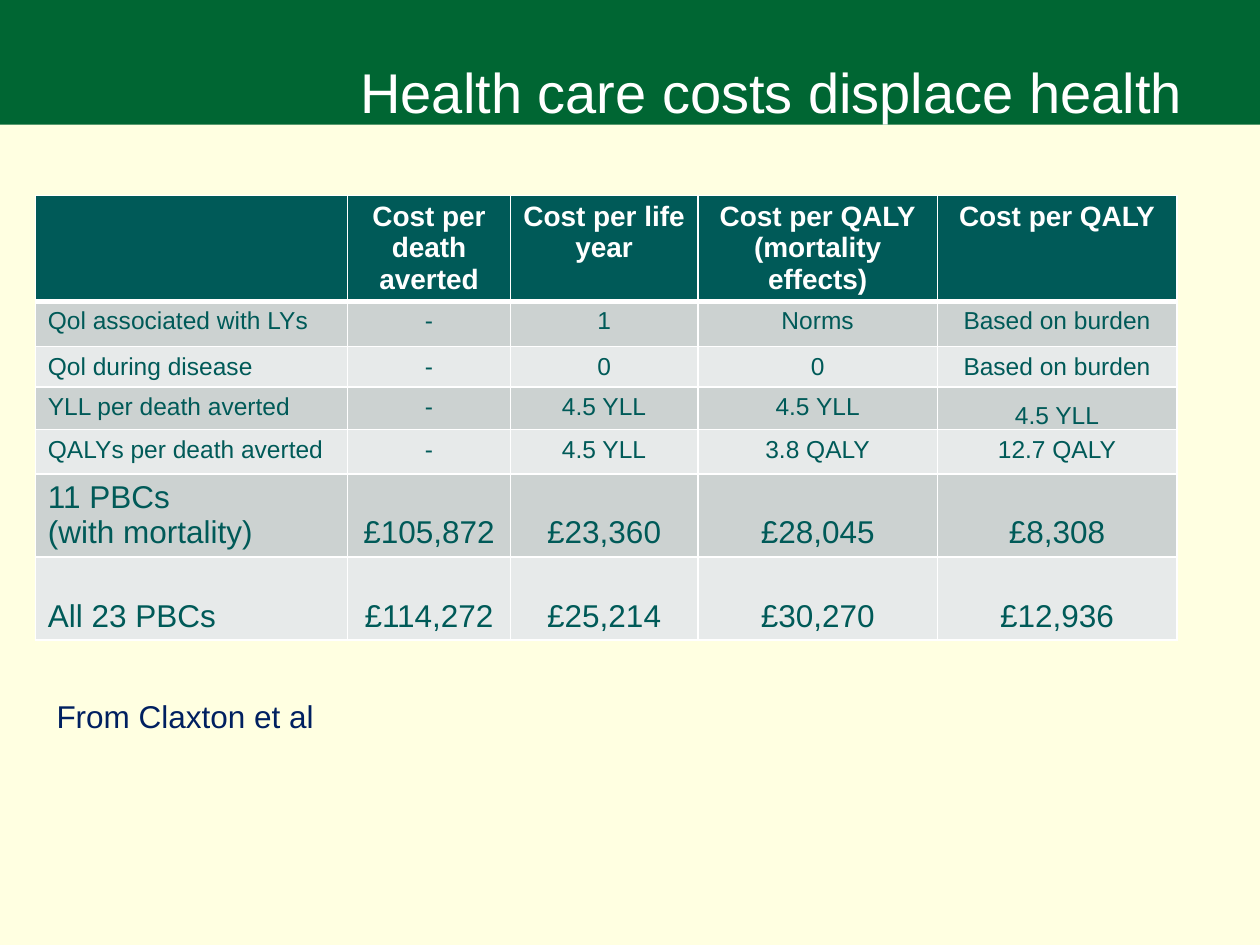
from pptx import Presentation
from pptx.dml.color import RGBColor as RGB
from pptx.enum.shapes import MSO_SHAPE as Shape
from pptx.enum.text import MSO_ANCHOR as Anchor, MSO_AUTO_SIZE as Fit, PP_ALIGN as Align
from pptx.oxml import parse_xml
from pptx.oxml.ns import nsdecls
from pptx.util import Inches, Pt

HEX = {"page": "FFFFE1", "band": "006633", "head": "005A58", "odd": "CCD2D1",
       "even": "E7EAEA", "white": "FFFFFF", "note": "002060"}
COLS = [2.48, 1.29, 1.49, 1.9, 1.9]
ROWS = [0.83, 0.36, 0.32, 0.34, 0.35, 0.66, 0.66]
DATA = [
    ["", "Cost per death averted", "Cost per life year",
     "Cost per QALY\n(mortality effects)", "Cost per QALY"],
    ["Qol associated with LYs", "-", "1", "Norms", "Based on burden"],
    ["Qol during disease", "-", "0", "0", "Based on burden"],
    ["YLL per death averted", "-", "4.5 YLL", "4.5 YLL", "4.5 YLL"],
    ["QALYs per death averted", "-", "4.5 YLL", "3.8 QALY", "12.7 QALY"],
    ["11 PBCs\n(with mortality)", "£105,872", "£23,360", "£28,045", "£8,308"],
    ["All 23 PBCs", "£114,272", "£25,214", "£30,270", "£12,936"],
]


def paint(fill, name):
    """Fill solidly with a named colour."""
    fill.solid()
    fill.fore_color.rgb = RGB.from_string(HEX[name])


def write(frame, text, size, color, align=Align.LEFT, bold=False):
    """Write text in one style, a paragraph per line."""
    frame.text = text
    for par in frame.paragraphs:
        par.alignment = align
        font = par.font
        font.name, font.size, font.bold = "Arial", Pt(size), bold
        font.color.rgb = RGB.from_string(HEX[color])


def header(slide, width, height):
    """Place the band and the title over it."""
    band = slide.shapes.add_shape(Shape.RECTANGLE, 0, 0, width, height)
    band.shadow.inherit = False
    paint(band.fill, "band")
    band.line.fill.background()
    slide.shapes._spTree.insert(2, band._element)
    title = slide.shapes.title
    title.left, title.top = int(width * 0.049), int(height * 0.22)
    title.width, title.height = int(width * 0.9), int(height * 1.02)
    frame = title.text_frame
    frame.auto_size, frame.vertical_anchor = Fit.NONE, Anchor.MIDDLE
    write(frame, "Health care costs displace health", 32, "white", Align.RIGHT)


def rule(cell, row):
    """Draw white borders, heavier under the header row."""
    heavy = {0: "B", 1: "T"}.get(row)
    for side in "LRTB":
        wide = Pt(3 if side == heavy else 1)
        cell._tc.get_or_add_tcPr().append(parse_xml(
            f'<a:ln{side} {nsdecls("a")} w="{wide}"><a:solidFill>'
            f'<a:srgbClr val="{HEX["white"]}"/></a:solidFill></a:ln{side}>'))


def grid(slide, left, top):
    """Build the cost table from its corner."""
    table = slide.shapes.add_table(
        len(ROWS), len(COLS), left, top, Inches(sum(COLS)), Inches(sum(ROWS))).table
    table.horz_banding = False
    for col, wide in zip(table.columns, COLS):
        col.width = Inches(wide)
    for r, (line, tall) in enumerate(zip(DATA, ROWS)):
        table.rows[r].height = Inches(tall)
        size = 16 if r == 0 else 14 if r < 5 else 18
        back = "head" if r == 0 else "odd" if r % 2 else "even"
        for c, text in enumerate(line):
            cell = table.cell(r, c)
            rule(cell, r)
            paint(cell.fill, back)
            cell.vertical_anchor = Anchor.BOTTOM if r > 4 else Anchor.TOP
            write(cell.text_frame, text, size, "head" if r else "white",
                  Align.CENTER if c or not r else Align.LEFT, r == 0)
    last = table.cell(3, 4)
    last.vertical_anchor = Anchor.BOTTOM
    last.margin_left = last.margin_right = Inches(0.05)
    last.margin_top = last.margin_bottom = 0


def credit(slide, left, top, width, height):
    """Name the source under the table."""
    frame = slide.shapes.add_textbox(left, top, width, height).text_frame
    frame.word_wrap = True
    frame.auto_size = Fit.SHAPE_TO_FIT_TEXT
    write(frame, "From Claxton et al", 18, "note")


def main():
    """Build and save the slide."""
    deck = Presentation()
    deck.slide_width, deck.slide_height = Inches(10), Inches(7.5)
    wide, tall = deck.slide_width, deck.slide_height
    slide = deck.slides.add_slide(deck.slide_layouts[5])
    paint(slide.background.fill, "page")
    header(slide, wide, int(tall * 0.132))
    grid(slide, int(wide * 0.028), Inches(1.55))
    credit(slide, int(wide * 0.035), Inches(5.48), int(wide * 0.858), Inches(0.4))
    deck.save("out.pptx")


if __name__ == "__main__":
    main()
